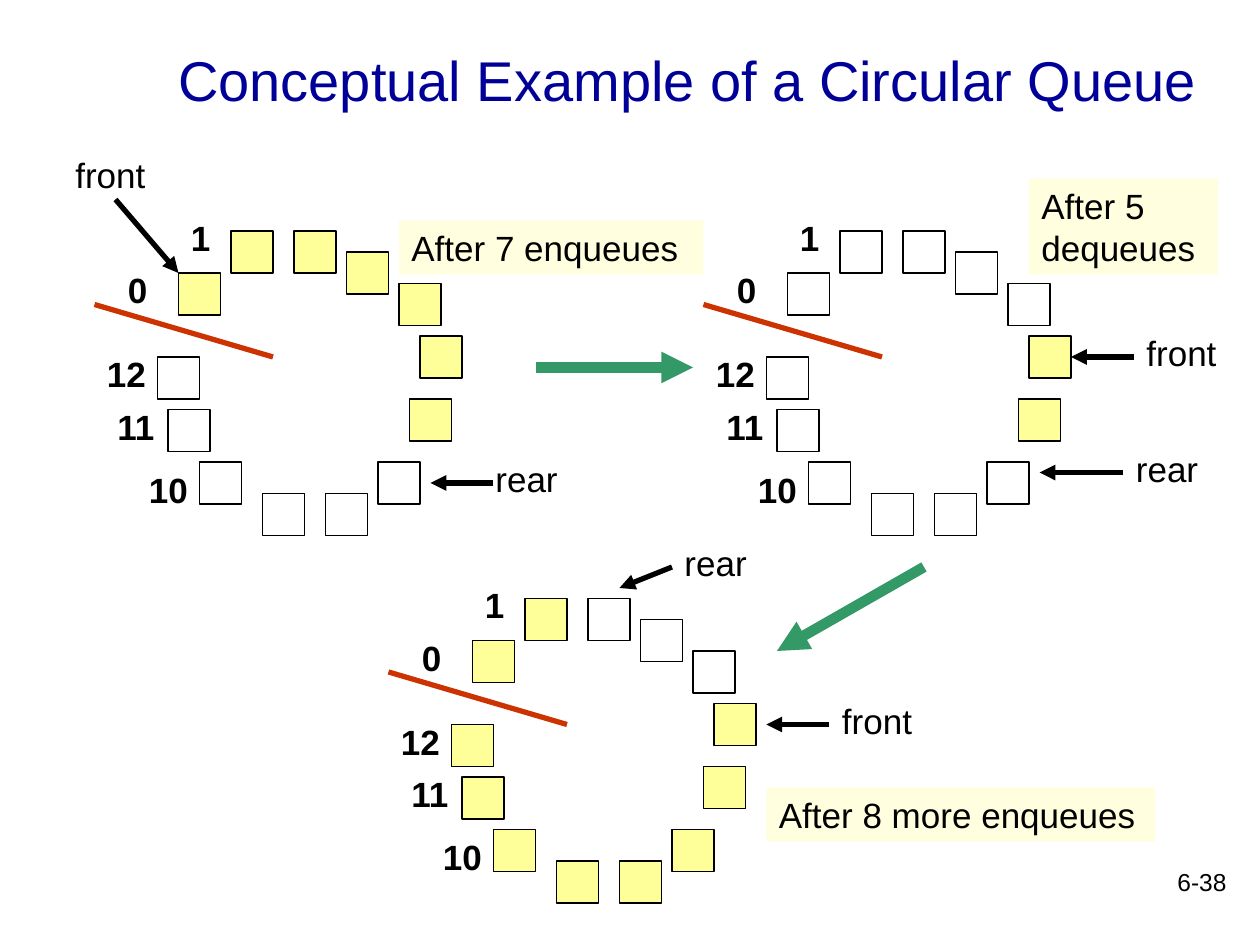
from lxml import etree
from pptx import Presentation
from pptx.dml.color import RGBColor
from pptx.enum import shapes, text
from pptx.oxml import ns
from pptx.util import Pt

BLACK, NAVY, RED, GREEN = "000000", "000099", "CC3300", "339966"
CELL_FILL, CAPTION_FILL = "FFFF99", "FFFFDF"

# Offsets from the top left corner of cell 1
CELL_SIZE = 24
CELLS = [(-30, 24), (0, 0), (36, 0), (66, 12), (96, 30), (108, 60), (102, 96),
         (84, 132), (54, 150), (18, 150), (-18, 132), (-36, 102), (-42, 72)]
INDEX_LABELS = [("1", -30, -12, 30), ("0", -66, 18, 30), ("12", -78, 66, 42),
                ("11", -72, 96, 54), ("10", -54, 132, 54)]


def color(value):
    return RGBColor.from_string(value)


class SlideBuilder:
    font_name = "Arial"
    text_height = 31

    def __init__(self, slide):
        self.slide = slide

    def text(self, content, left, top, width, height=text_height, size=20,
             font_color=BLACK, bold=False, fill=None, align=text.PP_ALIGN.LEFT,
             anchor=text.MSO_ANCHOR.TOP):
        shape = self.slide.shapes.add_textbox(Pt(left), Pt(top), Pt(width), Pt(height))
        if fill:
            shape.fill.solid()
            shape.fill.fore_color.rgb = color(fill)
        frame = shape.text_frame
        frame.word_wrap = True
        frame.vertical_anchor = anchor
        paragraph = frame.paragraphs[0]
        paragraph.text = content
        paragraph.alignment = align
        font = paragraph.font
        font.name, font.size, font.bold = self.font_name, Pt(size), bold
        font.color.rgb = color(font_color)
        return shape

    def cell(self, left, top, filled):
        shape = self.slide.shapes.add_shape(
            shapes.MSO_SHAPE.RECTANGLE, Pt(left), Pt(top), Pt(CELL_SIZE), Pt(CELL_SIZE))
        shape.shadow.inherit = False
        if filled:
            shape.fill.solid()
            shape.fill.fore_color.rgb = color(CELL_FILL)
        else:
            shape.fill.background()
        shape.line.color.rgb = color(BLACK)
        shape.line.width = Pt(0.75)
        return shape

    def line(self, start, end, line_color=BLACK, width=3, arrow=True):
        connector = self.slide.shapes.add_connector(
            shapes.MSO_CONNECTOR.STRAIGHT, *map(Pt, start + end))
        connector.line.color.rgb = color(line_color)
        connector.line.width = Pt(width)
        if arrow:
            outline = connector.line._get_or_add_ln()
            etree.SubElement(outline, ns.qn("a:tailEnd"), type="triangle")
        etree.SubElement(connector._element.spPr, ns.qn("a:effectLst"))
        return connector

    def ring(self, left, top, filled):
        """Draw one queue, with cell 1 at left, top; return its cells."""
        cells = [self.cell(left + x, top + y, index in filled)
                 for index, (x, y) in enumerate(CELLS)]
        for label, x, y, width in INDEX_LABELS:
            self.text(label, left + x, top + y, width, bold=True)
        self.line((left - 78, top + 42), (left + 24, top + 72), RED, arrow=False)
        return cells


def main():
    presentation = Presentation()
    presentation.slide_width, presentation.slide_height = Pt(720), Pt(540)
    builder = SlideBuilder(presentation.slides.add_slide(presentation.slide_layouts[6]))

    # Title and page number
    builder.text("Conceptual Example of a Circular Queue", 66, 12, 654, 66, size=32,
                 font_color=NAVY, align=text.PP_ALIGN.CENTER,
                 anchor=text.MSO_ANCHOR.MIDDLE)
    builder.text("6-38", 558, 492, 150, 36, size=14, align=text.PP_ALIGN.RIGHT)

    # Queue after 7 enqueues
    builder.ring(132, 132, range(7))
    builder.text("After 7 enqueues", 228, 126, 174, fill=CAPTION_FILL)
    builder.text("front", 36, 84, 114)
    builder.line((66, 114), (102, 156))
    builder.text("rear", 276, 258, 114)
    builder.line((282, 276), (246, 276))

    # Queue after 5 dequeues
    cells = builder.ring(480, 132, (5, 6))
    builder.text("After 5 dequeues", 588, 102, 108, 55, fill=CAPTION_FILL)
    builder.text("front", 648, 186, 60)
    builder.line((648, 204), (612, 204)).end_connect(cells[5], 3)
    builder.text("rear", 642, 252, 54)
    builder.line((642, 270), (594, 270))

    # Queue after 8 more enqueues
    builder.ring(300, 342, (0, 1, *range(5, 13)))
    builder.text("After 8 more enqueues", 438, 450, 222, fill=CAPTION_FILL)
    builder.text("front", 474, 396, 60)
    builder.line((474, 414), (438, 414))
    builder.text("rear", 384, 306, 54)
    builder.line((384, 324), (354, 336))

    # Arrows from one state to the next
    builder.line((306, 210), (396, 210), GREEN, 6)
    builder.line((528, 324), (444, 372), GREEN, 6)

    presentation.save("out.pptx")


if __name__ == "__main__":
    main()
